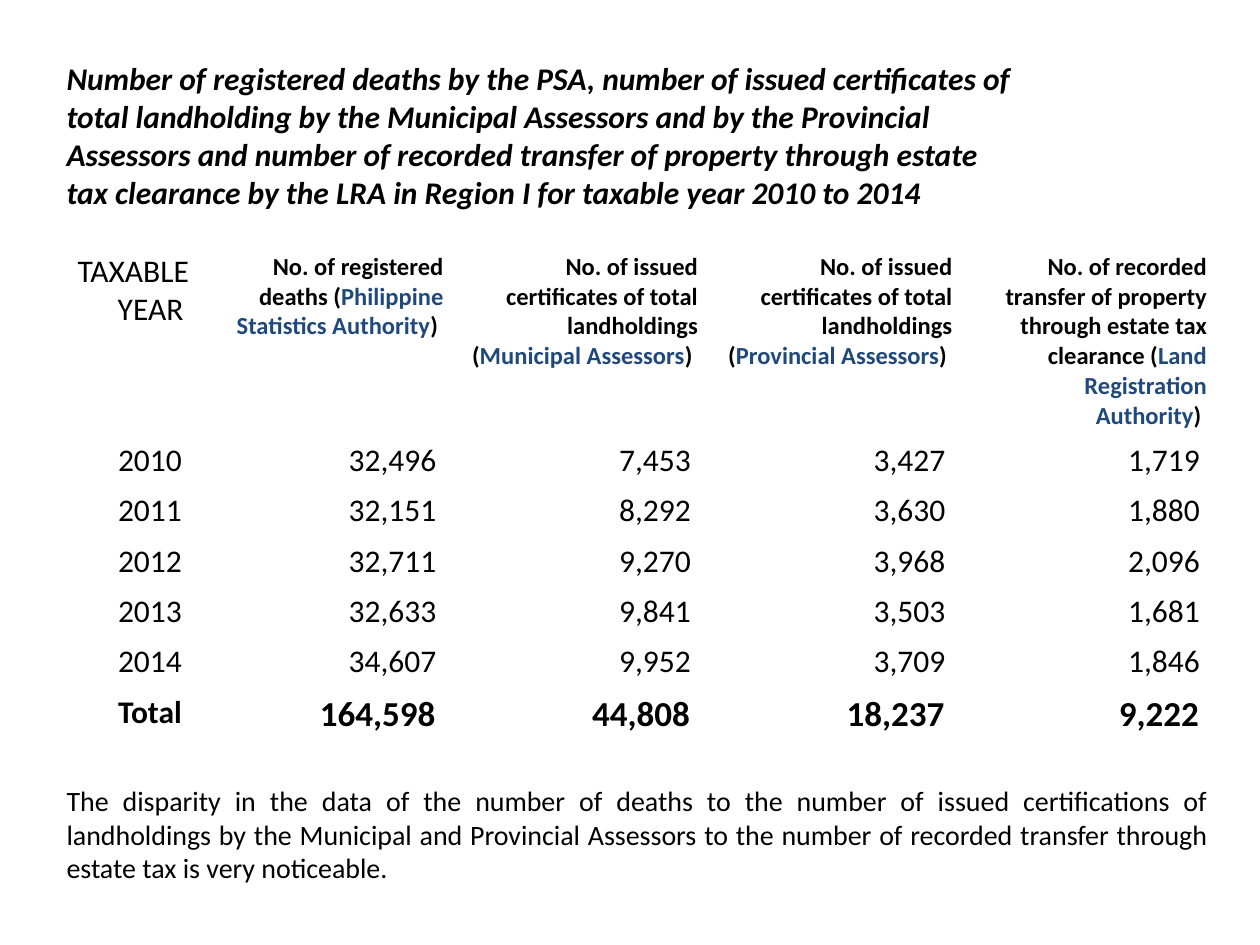
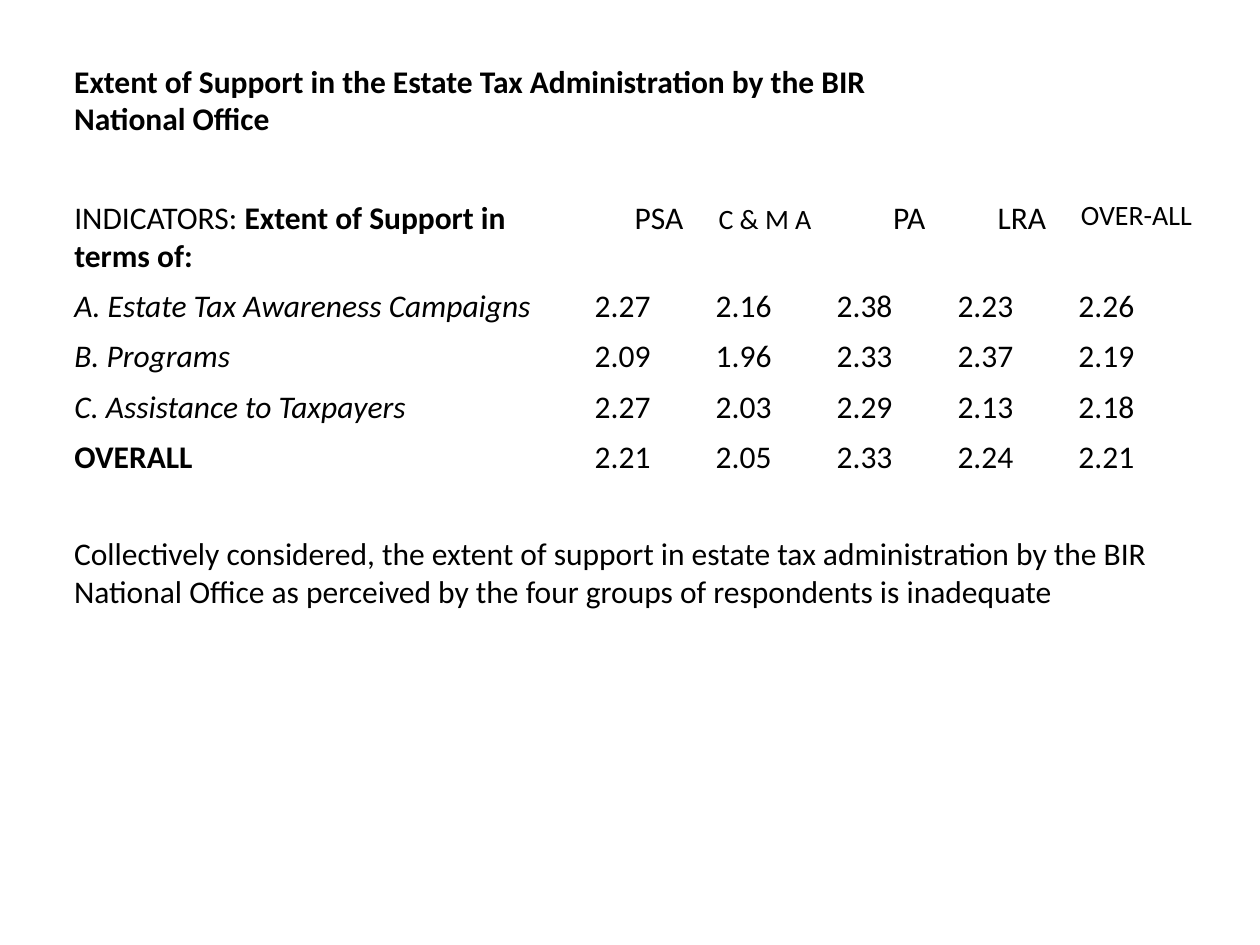
from dataclasses import dataclass

from pptx import Presentation
from pptx import util as u
from pptx.dml.color import RGBColor
from pptx.enum import text as t

PX = 9144  # EMU, 100 px to the inch


@dataclass(frozen=True)
class Theme:
    font: str = "Calibri"
    ink: str = "000000"
    blue: str = "1F497D"
    small: int = 14
    mid: int = 16
    body: int = 18
    large: int = 20
    row: int = 40


class Deck:
    def __init__(self, theme, wide, high):
        self.theme = theme
        self.prs = Presentation()
        self.prs.slide_width = u.Emu(wide * PX)
        self.prs.slide_height = u.Emu(high * PX)
        self.slide = None

    def page(self):
        self.slide = self.prs.slides.add_slide(self.prs.slide_layouts[6])

    def fill(self, frame, runs, align="LEFT"):
        """Fill a frame with one paragraph of (words, format) runs."""
        para = frame.paragraphs[0]
        para.alignment = getattr(t.PP_ALIGN, align)
        base = {"name": self.theme.font, "size": self.theme.body,
                "bold": False, "italic": False, "color": self.theme.ink}
        for words, form in runs:
            run = para.add_run()
            run.text = words
            look = {**base, **form}
            run.font.color.rgb = RGBColor.from_string(look.pop("color"))
            look["size"] = u.Pt(look["size"])
            for key, value in look.items():
                setattr(run.font, key, value)

    def text(self, box, words, align="LEFT", **form):
        shape = self.slide.shapes.add_textbox(*(u.Emu(n * PX) for n in box))
        shape.text_frame.word_wrap = True
        shape.text_frame.auto_size = t.MSO_AUTO_SIZE.SHAPE_TO_FIT_TEXT
        self.fill(shape.text_frame, [(words, form)], align)

    def table(self, left, top, cols, head, rows):
        """Draw rows of (runs, align) cells; head is the first row's height."""
        highs = [head] + [self.theme.row] * (len(rows) - 1)
        box = (left, top, sum(cols), sum(highs))
        grid = self.slide.shapes.add_table(
            len(rows), len(cols), *(u.Emu(n * PX) for n in box)).table
        grid.first_row = grid.horz_banding = False
        for col, wide in zip(grid.columns, cols):
            col.width = u.Emu(wide * PX)
        for row, high, cells in zip(grid.rows, highs, rows):
            row.height = u.Emu(high * PX)
            for cell, (runs, align) in zip(row.cells, cells):
                cell.fill.background()
                self.fill(cell.text_frame, runs, align)


def left(words, **form):
    return [(words, form)], "LEFT"


def right(words, **form):
    return [(words + " ", form)], "RIGHT"


def deaths(deck):
    th = deck.theme
    edge, wide = 43, 926
    deck.page()
    deck.text((edge, 42, 775, 131),
              "Number of registered deaths by the PSA, number of issued "
              "certificates of total landholding by the Municipal Assessors "
              "and by the Provincial Assessors and number of recorded transfer "
              "of property through estate tax clearance by the LRA in Region I "
              "for taxable year 2010 to 2014", bold=True, italic=True)

    heads = [
        ("No. of registered deaths", "Philippine Statistics Authority"),
        ("No. of issued certificates of total landholdings",
         "Municipal Assessors"),
        ("No. of issued certificates of total landholdings",
         "Provincial Assessors"),
        ("No. of recorded transfer of property through estate tax clearance",
         "Land Registration Authority"),
    ]
    counts = {
        2010: (32496, 7453, 3427, 1719),
        2011: (32151, 8292, 3630, 1880),
        2012: (32711, 9270, 3968, 2096),
        2013: (32633, 9841, 3503, 1681),
        2014: (34607, 9952, 3709, 1846),
    }
    bold = {"size": th.small, "bold": True}
    top = [([("TAXABLE YEAR", {}), (" ", {"size": th.small})], "RIGHT")]
    for label, source in heads:
        top.append(([(label + " (", bold), (source, {**bold, "color": th.blue}),
                     (") ", bold)], "RIGHT"))
    rows = [top]
    for year, nums in counts.items():
        rows.append([right(str(year))] + [right(f"{n:,}") for n in nums])
    sums = [sum(nums) for nums in zip(*counts.values())]
    rows.append([right("Total", bold=True)]
                + [right(f"{n:,}", size=th.large, bold=True) for n in sums])
    deck.table(edge, 195, [117] + [202] * len(heads), 150, rows)

    deck.text((edge, 617, wide, 91),
              "The disparity in the data of the number of deaths to the number "
              "of issued certifications of landholdings by the Municipal and "
              "Provincial Assessors to the number of recorded transfer through "
              "estate tax is very noticeable.", "JUSTIFY", size=th.mid)


def support(deck):
    th = deck.theme
    edge, wide = 49, 913
    deck.page()
    deck.text((edge, 44, 671, 71),
              "Extent of Support in the Estate Tax Administration by the BIR "
              "National Office", bold=True)
    deck.text((edge, 419, wide, 71),
              "Collectively considered, the extent of support in estate tax "
              "administration by the BIR National Office as perceived by the "
              "four groups of respondents is inadequate")

    scores = [
        ("A. Estate Tax Awareness Campaigns", (2.27, 2.16, 2.38, 2.23, 2.26)),
        ("B. Programs", (2.09, 1.96, 2.33, 2.37, 2.19)),
        ("C. Assistance to Taxpayers", (2.27, 2.03, 2.29, 2.13, 2.18)),
        ("OVERALL", (2.21, 2.05, 2.33, 2.24, 2.21)),
    ]
    rows = [[
        ([("INDICATORS: ", {}),
          ("Extent of Support in terms of:", {"bold": True})], "LEFT"),
        right("PSA"),
        ([("C & M A", {"size": th.mid}), (" ", {})], "RIGHT"),
        right("PA"),
        right("LRA"),
        right("OVER-ALL", size=th.mid),
    ]]
    for label, nums in scores:
        total = label == "OVERALL"
        rows.append([left(label, bold=total, italic=not total)]
                    + [left(f"{n:.2f}") for n in nums])
    deck.table(edge, 153, [413] + [96] * 4 + [115], 70, rows)


def main():
    deck = Deck(Theme(), 1000, 750)
    deaths(deck)
    support(deck)
    deck.prs.save("out.pptx")


if __name__ == "__main__":
    main()
